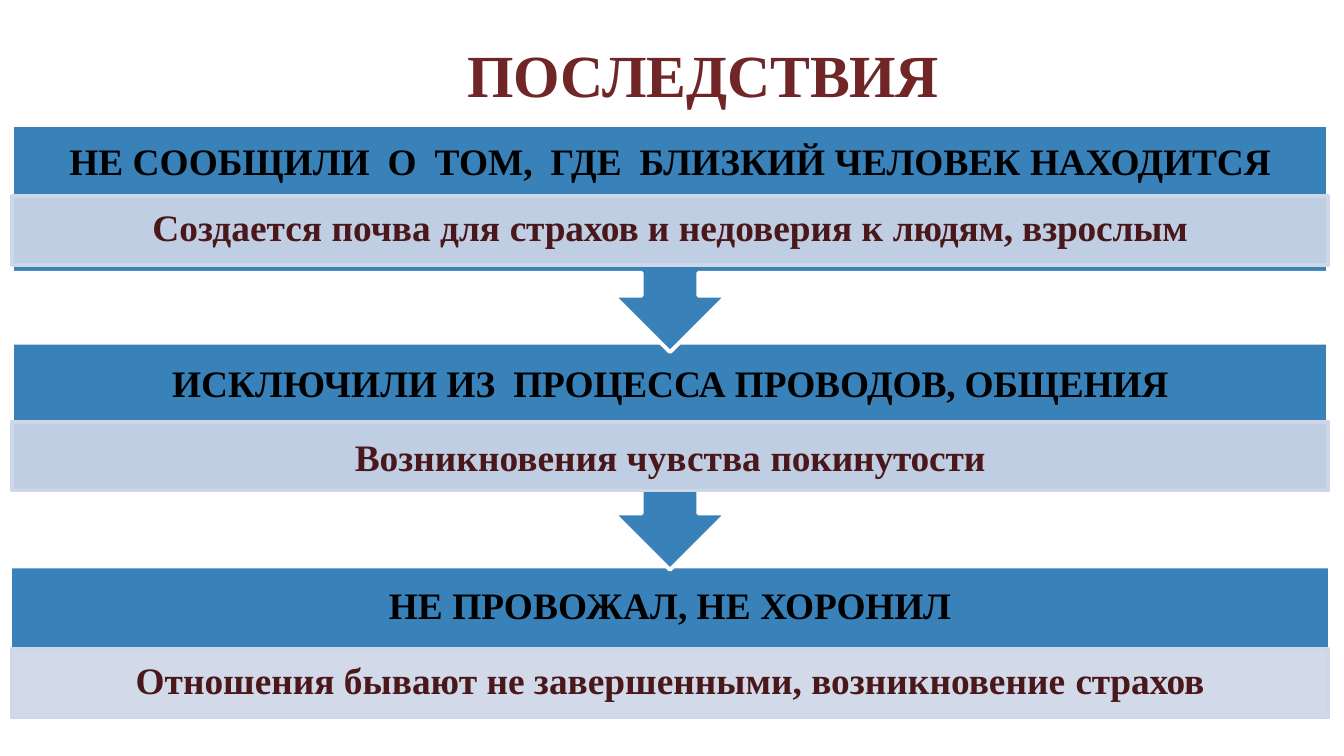
from lxml.etree import SubElement
from pptx import Presentation
from pptx.dml.color import RGBColor
from pptx.enum.shapes import MSO_SHAPE as SHAPE
from pptx.enum.text import MSO_ANCHOR as ANCHOR, PP_ALIGN as ALIGN
from pptx.oxml.ns import qn
from pptx.util import Inches, Pt

COLORS = {
    "title": "702527",
    "band": "3981B9",
    "strip": "CED7E7",
    "outline": "FFFFFF",
    "heading": "000000",
    "effect": "4A181A",
}
LEFT, WIDTH = 0.09, 9.79
RIGHT, CENTER = LEFT + WIDTH, LEFT + WIDTH / 2
BAND_HEIGHT, STRIP_HEIGHT = 1.1, 0.51
SHAFT, HEAD = 0.21, 0.42          # half widths of the arrow
SHAFT_LENGTH, ARROW_LENGTH = 0.17, 0.59
TIGHT, WIDE = -10, 450            # letter spacing in hundredths of a point
GAP = (" ", WIDE)


def rgb(name):
    return RGBColor.from_string(COLORS[name])


def write(shape, pieces, color, size, top_inset, align=ALIGN.CENTER):
    """Fill a shape with one bold line made of (text, letter spacing) pieces."""
    frame = shape.text_frame
    frame.word_wrap = True
    frame.vertical_anchor = ANCHOR.TOP
    frame.margin_left = frame.margin_right = frame.margin_bottom = 0
    frame.margin_top = Inches(top_inset)
    line = frame.paragraphs[0]
    line.alignment = align
    for text, spacing in pieces:
        run = line.add_run()
        run.text = text
        run.font.name = "Times New Roman"
        run.font.size = Pt(size)
        run.font.bold = True
        run.font.color.rgb = rgb(color)
        run.font._element.set("spc", str(spacing))


deck = Presentation()
deck.slide_width = Inches(10)
deck.slide_height = Inches(10 * 9 / 16)
slide = deck.slides.add_slide(deck.slide_layouts[6])
shapes = slide.shapes

title = shapes.add_textbox(Inches(3.48), Inches(0.27), Inches(3.56), Inches(0.56))
write(title, [("ПОСЛЕДСТВИЯ", TIGHT)], "title", 32, 0.01, ALIGN.LEFT)

# band top, strip top, heading inset, effect inset, heading, effect
steps = [
    (0.93, 1.46, 0.1, 0.06,
     [("НЕ СООБЩИЛИ", 0), GAP, ("О", 0), GAP, ("ТОМ,", 0), GAP, ("ГДЕ", 0), GAP,
      ("БЛИЗКИЙ ЧЕЛОВЕК ", 0), ("НАХОДИТСЯ", TIGHT)],
     [("Создается почва для ", 0), ("страхов ", TIGHT),
      ("и недоверия к ", 0), ("людям, взрослым", TIGHT)]),
    (2.55, 3.14, 0.13, 0.09,
     [("ИСКЛЮЧИЛИ ИЗ", 0), GAP, ("ПРОЦЕССА ПРОВОДОВ, ОБЩЕНИЯ", TIGHT)],
     [("Возникновения чувства ", 0), ("покинутости", TIGHT)]),
    (4.23, 4.83, 0.1, 0.06,
     [("НЕ ПРОВОЖАЛ, НЕ ", 0), ("ХОРОНИЛ", TIGHT)],
     [("Отношения бывают не завершенными, возникновение ", 0),
      ("страхов", TIGHT)]),
]

# Bottom step first, so that each arrow tip lies over the band below it
for step in reversed(steps):
    band_top, strip_top, heading_inset, effect_inset, heading, effect = step
    if step is steps[-1]:
        band = shapes.add_shape(SHAPE.RECTANGLE, Inches(LEFT), Inches(band_top),
                                Inches(WIDTH), Inches(strip_top - band_top))
        band.line.fill.background()
    else:
        bottom = band_top + BAND_HEIGHT
        shoulder = bottom + SHAFT_LENGTH
        corners = [
            (LEFT, band_top), (LEFT, bottom),
            (CENTER - SHAFT, bottom), (CENTER - SHAFT, shoulder),
            (CENTER - HEAD, shoulder), (CENTER, bottom + ARROW_LENGTH),
            (CENTER + HEAD, shoulder), (CENTER + SHAFT, shoulder),
            (CENTER + SHAFT, bottom), (RIGHT, bottom),
        ]
        outline = shapes.build_freeform(Inches(RIGHT), Inches(band_top))
        outline.add_line_segments([(Inches(x), Inches(y)) for x, y in corners])
        band = outline.convert_to_shape()
        band.line.color.rgb = rgb("outline")
        band.line.width = Pt(2)
    band.fill.solid()
    band.fill.fore_color.rgb = rgb("band")
    band.shadow.inherit = False
    write(band, heading, "heading", 20, heading_inset)

    strip = shapes.add_shape(SHAPE.RECTANGLE, Inches(LEFT), Inches(strip_top),
                             Inches(WIDTH), Inches(STRIP_HEIGHT))
    strip.fill.solid()
    strip.fill.fore_color.rgb = rgb("strip")
    fill_color = strip._element.spPr.find(qn("a:solidFill")).find(qn("a:srgbClr"))
    SubElement(fill_color, qn("a:alpha"), val="90000")
    strip.line.color.rgb = rgb("strip")
    strip.line.width = Pt(2)
    strip.shadow.inherit = False
    write(strip, effect, "effect", 20, effect_inset)

deck.save("out.pptx")
